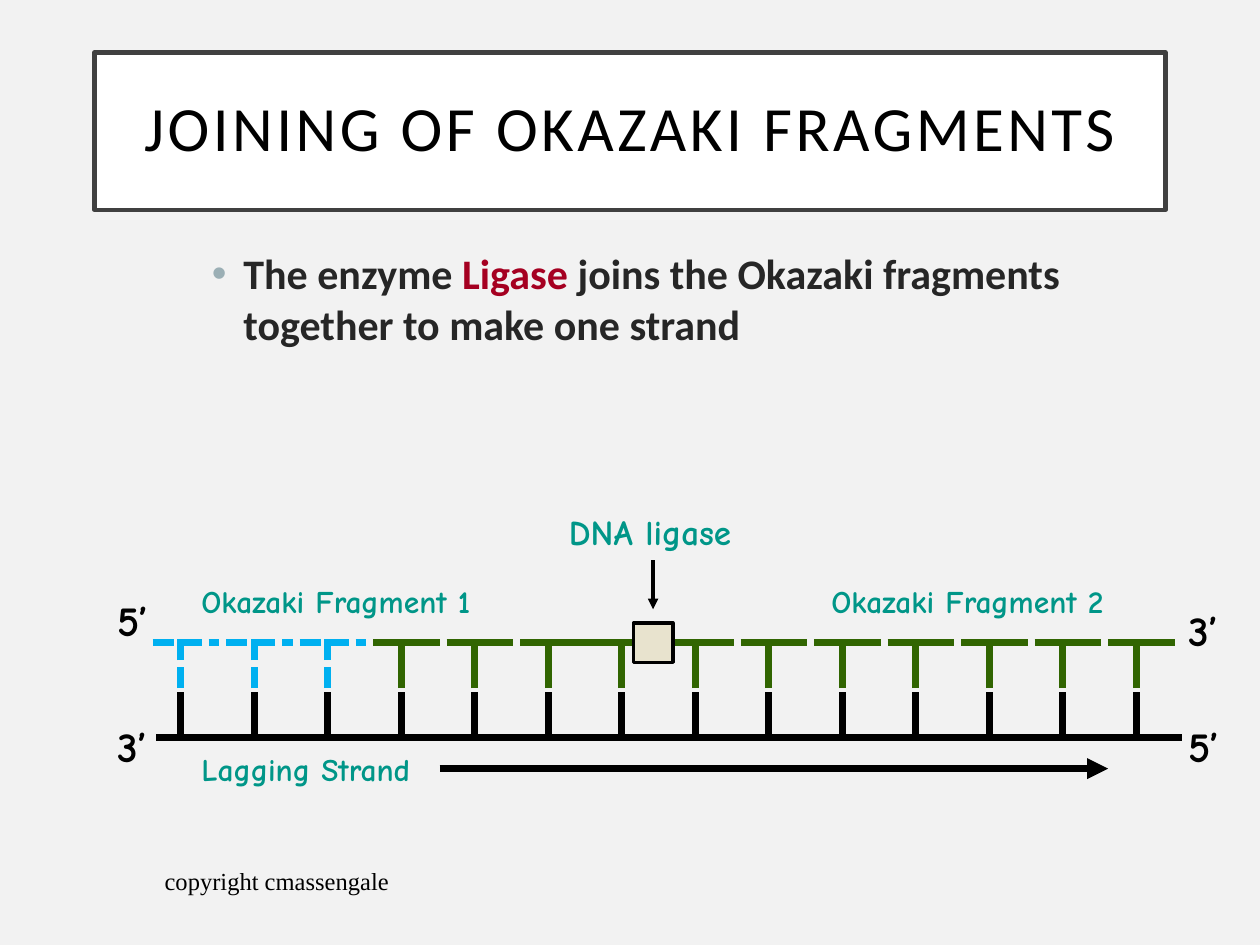
from lxml.etree import SubElement
from pptx import Presentation
from pptx.dml.color import RGBColor
from pptx.enum.dml import MSO_LINE
from pptx.enum.shapes import MSO_CONNECTOR, MSO_SHAPE
from pptx.enum.text import MSO_ANCHOR, MSO_AUTO_SIZE, PP_ALIGN
from pptx.oxml.ns import qn
from pptx.util import Pt

BACKGROUND = RGBColor(0xF2, 0xF2, 0xF2)
WHITE = RGBColor(0xFF, 0xFF, 0xFF)
BLACK = RGBColor(0, 0, 0)
FRAME = RGBColor(0x40, 0x40, 0x40)
BODY = RGBColor(0x26, 0x26, 0x26)
CRIMSON = RGBColor(0xA5, 0x00, 0x21)
TEAL = RGBColor(0x00, 0x96, 0x88)
BLUE = RGBColor(0x00, 0xB0, 0xF0)
GREEN = RGBColor(0x31, 0x65, 0x01)
LIGASE = RGBColor(0xE8, 0xE3, 0xCE)
BULLET = "9BAFB5"

BASE_COUNT = 14
DOTTED_COUNT = 3
LAST_OF_FRAGMENT = 6
FIRST_BASE, BASE_STEP = 103.2, 42
NEW_STRAND, TEMPLATE_STRAND = 367.2, 421.2


def style_run(run, font_name, size, color, bold=False):
    run.font.name = font_name
    run.font.size = Pt(size)
    run.font.color.rgb = color
    run.font.bold = bold


def add_box(slide, left, top, width, height, fill, outline, weight):
    box = slide.shapes.add_shape(
        MSO_SHAPE.RECTANGLE, Pt(left), Pt(top), Pt(width), Pt(height))
    box.shadow.inherit = False
    box.fill.solid()
    box.fill.fore_color.rgb = fill
    box.line.color.rgb = outline
    box.line.width = Pt(weight)
    return box


def add_line(slide, start, end, color=BLACK, weight=4, dotted=False, arrow=False):
    line = slide.shapes.add_connector(
        MSO_CONNECTOR.STRAIGHT, *(Pt(value) for value in (*start, *end)))
    line.line.color.rgb = color
    line.line.width = Pt(weight)
    if dotted:
        line.line.dash_style = MSO_LINE.SQUARE_DOT
    if arrow:
        SubElement(line.line._get_or_add_ln(), qn("a:tailEnd"), type="triangle")
    SubElement(line._element.spPr, qn("a:effectLst"))


def add_label(slide, text, left, top, width, height, size, color,
              font_name="Comic Neue", bold=True):
    label = slide.shapes.add_textbox(Pt(left), Pt(top), Pt(width), Pt(height))
    frame = label.text_frame
    frame.word_wrap = False
    frame.auto_size = MSO_AUTO_SIZE.SHAPE_TO_FIT_TEXT
    frame.text = text
    style_run(frame.paragraphs[0].runs[0], font_name, size, color, bold)
    return frame


def add_title(slide):
    title = add_box(slide, 54, 30, 612, 90, WHITE, FRAME, 2.5)
    frame = title.text_frame
    frame.text = "JOINING OF OKAZAKI FRAGMENTS"
    frame.vertical_anchor = MSO_ANCHOR.MIDDLE
    heading = frame.paragraphs[0]
    heading.alignment = PP_ALIGN.CENTER
    heading.line_spacing = 0.9
    run = heading.runs[0]
    style_run(run, "Calibri", 36, BLACK)
    run.font._element.set("spc", "200")


def add_statement(slide):
    statement = slide.shapes.add_textbox(Pt(114), Pt(138), Pt(564), Pt(174))
    statement.text_frame.word_wrap = True
    paragraph = statement.text_frame.paragraphs[0]
    properties = paragraph._p.get_or_add_pPr()
    properties.set("marL", str(Pt(18)))
    properties.set("indent", str(Pt(-18)))
    bullet_color = SubElement(properties, qn("a:buClr"))
    SubElement(bullet_color, qn("a:srgbClr"), val=BULLET)
    SubElement(properties, qn("a:buFont"), typeface="Arial")
    SubElement(properties, qn("a:buChar"), char="•")
    parts = [
        ("The enzyme ", BODY),
        ("Ligase", CRIMSON),
        (" joins the Okazaki fragments together to make one strand", BODY),
    ]
    for text, color in parts:
        run = paragraph.add_run()
        run.text = text
        style_run(run, "Calibri", 24, color, bold=True)


def add_base_pair(slide, index):
    x = FIRST_BASE + index * BASE_STEP
    dotted = index < DOTTED_COUNT
    color = BLUE if dotted else GREEN
    left = x - (28 if index == LAST_OF_FRAGMENT else 16)
    add_line(slide, (x, 423.2), (x, 395.2))
    add_line(slide, (x, 393.2), (x, 365.2), color, dotted=dotted)
    add_line(slide, (left, NEW_STRAND), (left + 38, NEW_STRAND), color, dotted=dotted)


def add_strands(slide):
    add_line(slide, (675.2, TEMPLATE_STRAND), (89.2, TEMPLATE_STRAND))
    for index in range(BASE_COUNT):
        add_base_pair(slide, index)
    add_line(slide, (251.2, 439.2), (633.2, 439.2), arrow=True)
    add_box(slide, 362, 356, 22.5, 22.5, LIGASE, BLACK, 2)
    add_line(slide, (373.2, 320.2), (373.2, 348.2), weight=2, arrow=True)


def add_strand_labels(slide):
    for text, left, top, width in [
        ("Okazaki Fragment 1", 108, 329.2, 190),
        ("Okazaki Fragment 2", 468, 329.2, 190),
        ("Lagging Strand", 108, 425.2, 145),
    ]:
        add_label(slide, text, left, top, width, 29, 18, TEAL)
    add_label(slide, "DNA ligase", 318, 288, 126, 36, 20, TEAL)
    for text, left, top in [
        ("5’", 60, 336),
        ("3’", 60, 408),
        ("3’", 672, 342),
        ("5’", 672, 408),
    ]:
        add_label(slide, text, left, top, 34.5, 36, 24, BLACK)


def add_footer(slide):
    frame = add_label(slide, "copyright cmassengale", 87, 491, 358.5, 25, 14, BLACK,
                      "Times New Roman", bold=False)
    frame.auto_size = MSO_AUTO_SIZE.NONE
    frame.word_wrap = True
    frame.vertical_anchor = MSO_ANCHOR.MIDDLE


def main():
    presentation = Presentation()
    presentation.slide_width = Pt(720)
    presentation.slide_height = Pt(540)
    slide = presentation.slides.add_slide(presentation.slide_layouts[6])
    slide.background.fill.solid()
    slide.background.fill.fore_color.rgb = BACKGROUND
    add_title(slide)
    add_statement(slide)
    add_strands(slide)
    add_strand_labels(slide)
    add_footer(slide)
    presentation.save("out.pptx")


if __name__ == "__main__":
    main()
